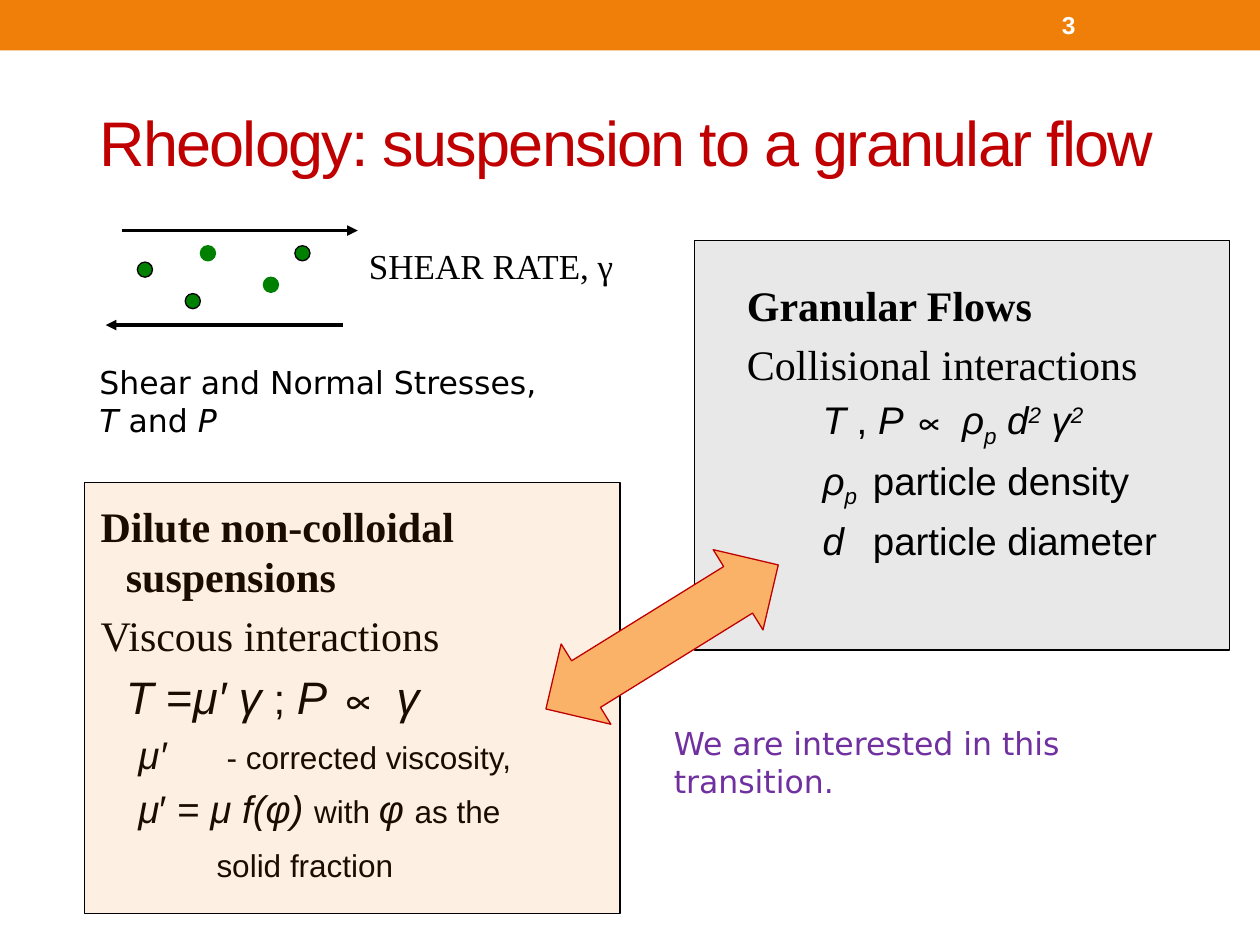
from lxml.etree import SubElement
from pptx import Presentation
from pptx.dml.color import RGBColor
from pptx.enum.shapes import MSO_CONNECTOR, MSO_SHAPE
from pptx.enum.text import MSO_ANCHOR, MSO_AUTO_SIZE
from pptx.oxml.ns import qn
from pptx.util import Inches, Pt

BLACK = RGBColor(0x00, 0x00, 0x00)
WHITE = RGBColor(0xFF, 0xFF, 0xFF)
ORANGE = RGBColor(0xF0, 0x7F, 0x09)
LIGHT_ORANGE = RGBColor(0xF9, 0xB2, 0x68)
RED = RGBColor(0xC0, 0x00, 0x00)
GREEN = RGBColor(0x00, 0x80, 0x00)
PURPLE = RGBColor(0x70, 0x30, 0xA0)

SANS, SERIF, UI = "Arial", "Times New Roman", "DejaVu Sans"
BASELINES = {"sub": "-25000", "sup": "30000"}

# Paragraph: runs of (text, size, styles), then its format
DILUTE = [
    ([("Dilute non-colloidal suspensions", 24, "b")],
     {"font": SERIF, "margin": 0.2, "indent": -0.2}),
    ([("Viscous interactions", 24, "")], {"font": SERIF}),
    ([("T", 26, "i"), (" =", 26, ""), ("μ′ γ", 26, "i"), (" ; ", 24, ""),
      ("P ", 26, "i"), ("∝ ", 26, ""), ("γ", 26, "i")], {"indent": 0.2}),
    ([("μ′", 22, "i"), ("\t- corrected viscosity,", 18, "")],
     {"indent": 0.3, "tab": 0.68}),
    ([("μ", 22, "i"), ("′ = ", 22, ""), ("μ f(φ) ", 22, "i"), ("with ", 18, ""),
      ("φ ", 22, "i"), ("as the", 18, "")], {"indent": 0.3}),
    ([("solid fraction", 18, ""), (" ", 22, "")], {"indent": 0.92}),
]
GRANULAR = [
    ([("Granular Flows", 24, "b")], {"font": SERIF}),
    ([("Collisional interactions", 24, "")], {"font": SERIF}),
    ([("T", 22, "i"), (" , ", 22, ""), ("P ", 22, "i"), ("∝ ", 22, ""),
      ("ρ", 22, "i"), ("p", 22, "i sub"), (" d", 22, "i"), ("2", 22, "i sup"),
      (" γ", 22, "i"), ("2", 22, "i sup")], {"indent": 0.6}),
    ([("ρ", 22, "i"), ("p", 22, "i sub"), ("\tparticle density", 22, "")],
     {"indent": 0.6, "tab": 1.04}),
    ([("d", 22, "i"), ("\tparticle diameter", 22, "")],
     {"indent": 0.6, "tab": 1.04}),
]
PARTICLES = [(1.09, 2.08, BLACK), (1.59, 1.95, GREEN), (2.09, 2.2, GREEN),
             (1.47, 2.33, BLACK), (2.34, 1.95, BLACK)]


def add_shape(slide, kind, box, fill, line=None, opacity=None):
    s = slide.shapes.add_shape(kind, *map(Inches, box))
    s.shadow.inherit = False
    s.fill.solid()
    s.fill.fore_color.rgb = fill
    if opacity is not None:
        color = s.fill._xPr.find(qn("a:solidFill"))[0]
        SubElement(color, qn("a:alpha"), val=str(opacity * 1000))
    if line is None:
        s.line.fill.background()
    else:
        s.line.color.rgb = line
        s.line.width = Pt(0.75)
    return s


def add_arrow(slide, x1, x2, y):
    c = slide.shapes.add_connector(MSO_CONNECTOR.STRAIGHT, Inches(x1), Inches(y),
                                   Inches(x2), Inches(y))
    c.line.color.rgb = BLACK
    c.line.width = Pt(2)
    SubElement(c.line._get_or_add_ln(), qn("a:tailEnd"), type="triangle")
    SubElement(c._element.spPr, qn("a:effectLst"))


def format_paragraph(p, margin=0, indent=0, before=20, tab=None):
    """Lengths are inches; the space before is a percentage of the line."""
    pPr = p._p.get_or_add_pPr()
    pPr.set("marL", str(Inches(margin)))
    pPr.set("indent", str(Inches(indent)))
    spacing = SubElement(pPr, qn("a:spcBef"))
    SubElement(spacing, qn("a:spcPct"), val=str(before * 1000))
    if tab is not None:
        tabs = SubElement(pPr, qn("a:tabLst"))
        SubElement(tabs, qn("a:tab"), pos=str(Inches(tab)), algn="l")


def add_run(p, text, size, styles, font, color):
    r = p.add_run()
    r.text = text
    styles = styles.split()
    values = {"name": font, "size": Pt(size), "bold": "b" in styles,
              "italic": "i" in styles}
    for name, value in values.items():
        setattr(r.font, name, value)
    r.font.color.rgb = color
    for style in styles:
        if style in BASELINES:
            r._r.get_or_add_rPr().set("baseline", BASELINES[style])
    return r


def add_text(slide, box, paragraphs, color=BLACK, anchor=MSO_ANCHOR.TOP):
    tf = slide.shapes.add_textbox(*map(Inches, box)).text_frame
    values = {"word_wrap": True, "auto_size": MSO_AUTO_SIZE.NONE,
              "vertical_anchor": anchor}
    for name, value in values.items():
        setattr(tf, name, value)
    for i, (runs, layout) in enumerate(paragraphs):
        p = tf.paragraphs[0] if i == 0 else tf.add_paragraph()
        layout = dict(layout)
        font = layout.pop("font", SANS)
        format_paragraph(p, **layout)
        for run in runs:
            add_run(p, *run, font, color)
    return tf


def add_label(slide, box, runs, font, color=BLACK, before=0, anchor=MSO_ANCHOR.TOP):
    """Text of a single paragraph."""
    return add_text(slide, box, [(runs, {"font": font, "before": before})],
                    color, anchor)


def add_shear_diagram(slide):
    add_arrow(slide, 0.97, 2.84, 1.83)
    add_arrow(slide, 2.72, 0.84, 2.58)
    for x, y, line in PARTICLES:
        add_shape(slide, MSO_SHAPE.OVAL, (x, y, 0.12, 0.12), GREEN, line)
    add_label(slide, (2.83, 1.89, 2.42, 0.44), [("SHEAR RATE, γ", 20, "")],
              SERIF, before=50)


def main():
    prs = Presentation()
    prs.slide_width, prs.slide_height = Inches(10), Inches(7.5)
    slide = prs.slides.add_slide(prs.slide_layouts[6])

    add_shape(slide, MSO_SHAPE.RECTANGLE, (0, 0, 10, 0.4), ORANGE)
    title = add_label(slide, (0.69, 0.58, 9, 1.08),
                      [("Rheology: suspension to a granular flow", 36, "")],
                      SANS, RED, anchor=MSO_ANCHOR.MIDDLE)
    title.paragraphs[0].runs[0]._r.get_or_add_rPr().set("spc", "-100")
    add_label(slide, (8.33, 0.02, 1.17, 0.36), [("3", 14, "b")], SANS, WHITE,
              anchor=MSO_ANCHOR.MIDDLE)

    add_text(slide, (0.7, 3.92, 4.68, 3.08), DILUTE)
    add_shape(slide, MSO_SHAPE.RECTANGLE, (5.51, 1.91, 4.25, 3.25), BLACK, BLACK, 9)
    add_text(slide, (5.83, 2.17, 3.58, 2.75), GRANULAR)
    add_shear_diagram(slide)
    add_shape(slide, MSO_SHAPE.RECTANGLE, (0.67, 3.83, 4.25, 3.42), ORANGE, BLACK, 11)

    transition = add_shape(slide, MSO_SHAPE.UP_DOWN_ARROW, (4.88, 3.97, 0.75, 2.17),
                           LIGHT_ORANGE, RED)
    transition.rotation = 238.2
    transition.adjustments[0] = 0.5
    transition.adjustments[1] = 0.58

    add_label(slide, (0.69, 2.83, 3.81, 0.71),
              [("Shear and Normal Stresses, ", 18, ""), ("T", 18, "i"),
               (" and ", 18, ""), ("P", 18, "i")], UI)
    add_label(slide, (5.25, 5.7, 3.67, 0.71),
              [("We are interested in this transition.", 18, "")], UI, PURPLE)
    prs.save("out.pptx")


if __name__ == "__main__":
    main()
